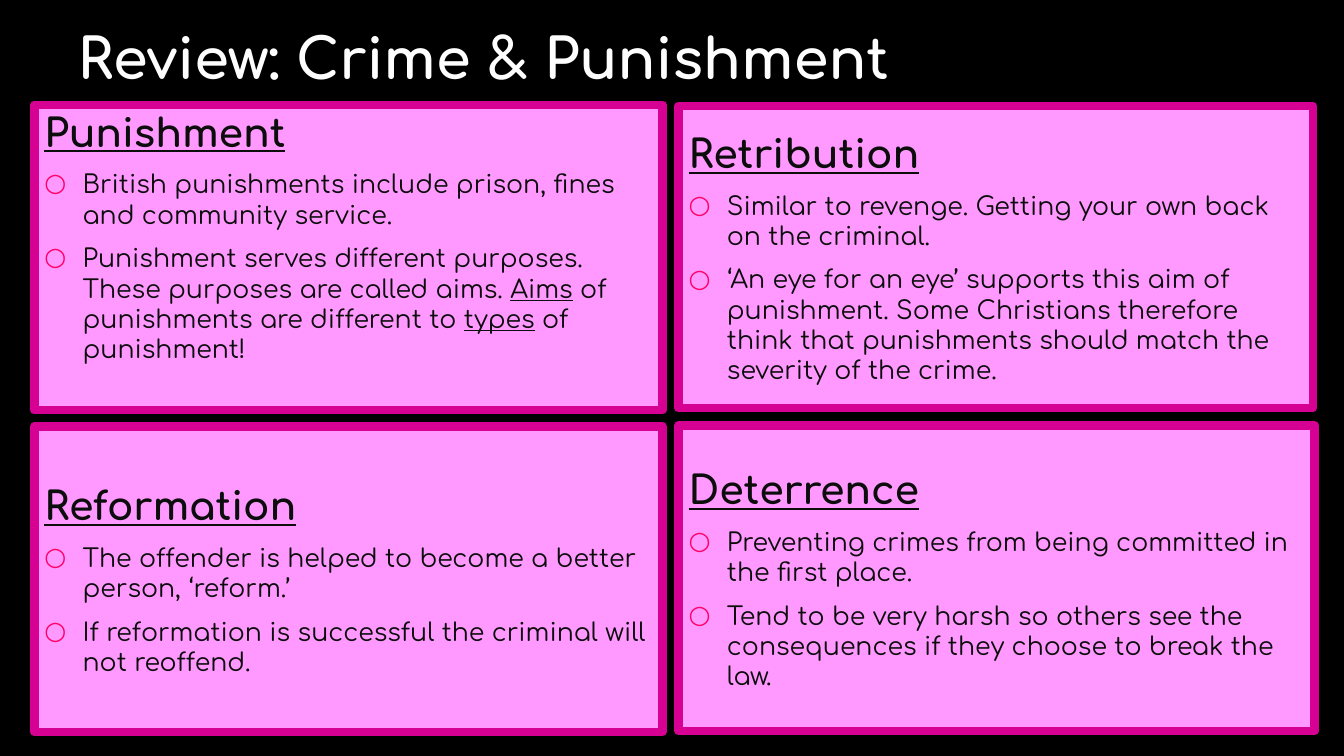
"""Build the Crime & Punishment review slide with four topic boxes."""
from lxml.etree import SubElement as Sub
from pptx import Presentation
from pptx.dml.color import RGBColor as RGB
from pptx.enum.text import MSO_ANCHOR as Anchor, MSO_AUTO_SIZE as Fit, PP_ALIGN as Align
from pptx.oxml.ns import qn
from pptx.util import Inches, Pt

BLACK = RGB(0x00, 0x00, 0x00)
WHITE = RGB(0xFE, 0xFE, 0xFE)
INK = RGB(0x0D, 0x0D, 0x0D)
PINK = RGB(0xFF, 0x99, 0xFF)
EDGE = RGB(0xD6, 0x00, 0x93)
DOT = RGB(0xFF, 0x00, 0x66)

BOXES = [
    ((0.34, 1.04, 6.23, 3.03), 0.48, "Punishment", [
        "British punishments include prison, fines and community service.",
        "Punishment serves different purposes. These purposes are called aims. "
        "_Aims_ of punishments are different to _types_ of punishment!"]),
    ((6.73, 1.05, 6.29, 3), 0.05, "Retribution", [
        "Similar to revenge. Getting your own back on the criminal.",
        "‘An eye for an eye’ supports this aim of punishment. Some Christians "
        "therefore think that punishments should match the severity of the crime."]),
    ((6.73, 4.22, 6.31, 3.03), 0.05, "Deterrence", [
        "Preventing crimes from being committed in the first place.",
        "Tend to be very harsh so others see the consequences if they choose "
        "to break the law."]),
    ((0.34, 4.23, 6.23, 3.03), 0.05, "Reformation", [
        "The offender is helped to become a better person, ‘reform.’",
        "If reformation is successful the criminal will not reoffend."]),
]


def place(shape, spot, anchor):
    shape.left, shape.top, shape.width, shape.height = map(Inches, spot)
    frame = shape.text_frame
    frame.word_wrap = True
    frame.auto_size = Fit.NONE
    frame.vertical_anchor = anchor
    return frame


def style(para, size, color, bold):
    para.alignment = Align.LEFT
    font = para.font
    font.name, font.size, font.bold = "Comfortaa", Pt(size), bold
    font.color.rgb = color


prs = Presentation()
prs.slide_width, prs.slide_height = Inches(13.33), Inches(7.5)
slide = prs.slides.add_slide(prs.slide_layouts.get_by_name("Comparison"))
slide.background.fill.solid()
slide.background.fill.fore_color.rgb = BLACK

title, *bodies = slide.placeholders
frame = place(title, (0.67, -0.3, 12, 1.25), Anchor.BOTTOM)
frame.text = "Review: Crime & Punishment"
style(frame.paragraphs[0], 40, WHITE, True)

for body, (spot, foot, head, points) in zip(bodies, BOXES):
    frame = place(body, spot, Anchor.MIDDLE)
    frame.margin_bottom = Inches(foot)
    body.fill.solid()
    body.fill.fore_color.rgb = PINK
    body.line.color.rgb = EDGE
    body.line.width = Pt(6)
    for row, text in enumerate([head, *points]):
        para = frame.add_paragraph() if row else frame.paragraphs[0]
        para.space_after = Pt(6)
        props = para._p.get_or_add_pPr()
        props.set("marL", str(Inches(0.38)))
        props.set("indent", str(-Inches(0.38)))
        if row:
            tint = Sub(props, qn("a:buClr"))
            Sub(tint, qn("a:srgbClr"), val=str(DOT))
            Sub(props, qn("a:buFont"), typeface="Comfortaa")
            Sub(props, qn("a:buChar"), char="○")
            style(para, 18, INK, False)
        else:
            Sub(props, qn("a:buNone"))
            style(para, 28, INK, True)
            para.font.underline = True
        for part, words in enumerate(text.split("_")):
            run = para.add_run()
            run.text = words
            if part % 2:
                run.font.underline = True

prs.save("out.pptx")
